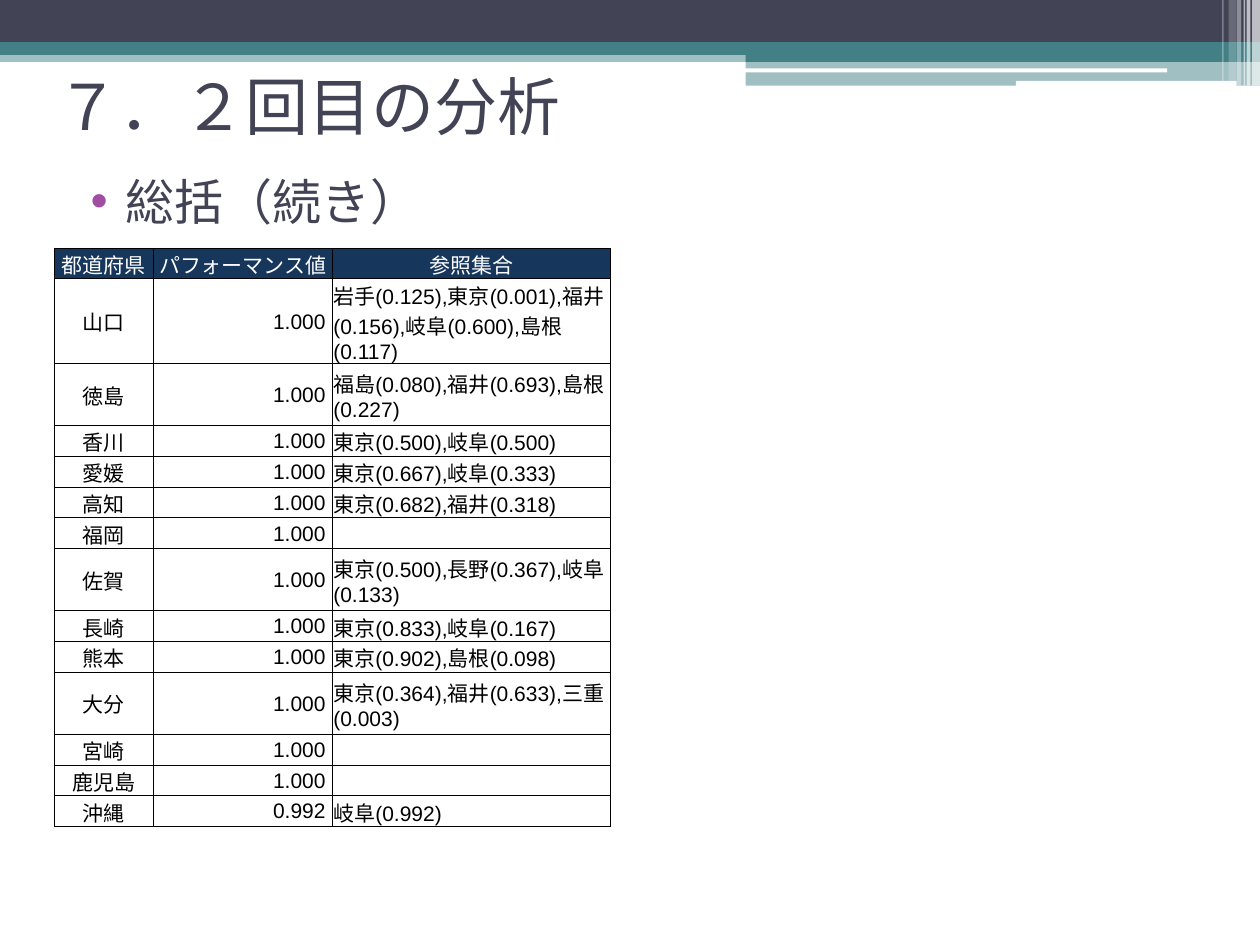
from lxml import etree
from pptx import Presentation
from pptx.dml.color import RGBColor
from pptx.enum.shapes import MSO_SHAPE as Shape
from pptx.enum.text import MSO_ANCHOR as Anchor, MSO_AUTO_SIZE as AutoSize, PP_ALIGN as Align
from pptx.oxml.ns import qn
from pptx.util import Cm, Pt

SLATE = RGBColor(0x42, 0x44, 0x56)
TEAL = RGBColor(0x43, 0x80, 0x86)
NAVY = RGBColor(0x16, 0x36, 0x5C)
WHITE = RGBColor(0xFF, 0xFF, 0xFF)
BLACK = RGBColor(0, 0, 0)
PURPLE = RGBColor(0xA0, 0x4D, 0xA3)

# kind, left, top, width, height (cm), colour, opacity (%)
BANDS = [
    (Shape.RECTANGLE, 0, 1.02, 25.4, 0.23, TEAL, 50),
    (Shape.RECTANGLE, 0, 0, 25.4, 0.86, SLATE, 100),
    (Shape.RECTANGLE, 0, 0.85, 25.4, 0.26, TEAL, 100),
    (Shape.RECTANGLE, 15.03, 1, 10.37, 0.25, TEAL, 100),
    (Shape.RECTANGLE, 15.03, 1.23, 10.37, 0.5, TEAL, 50),
    (Shape.ROUNDED_RECTANGLE, 15.02, 1.38, 8.51, 0.08, WHITE, 100),
    (Shape.ROUNDED_RECTANGLE, 20.48, 1.63, 4.45, 0.1, WHITE, 100),
]
# left, width, height (cm), opacity (%)
STRIPES = [
    (25.24, 0.16, 1.73, 65), (25.13, 0.08, 1.73, 65), (25.07, 0.03, 1.73, 60),
    (24.94, 0.08, 1.73, 40), (24.77, 0.16, 1.63, 20), (24.64, 0.03, 1.63, 30),
]
BANDS += [(Shape.RECTANGLE, left, 0, width, height, WHITE, opacity)
          for left, width, height, opacity in STRIPES]

ROWS = [
    ("都道府県", "パフォーマンス値", "参照集合"),
    ("山口", "1.000 ", "岩手(0.125),東京(0.001),福井(0.156),岐阜(0.600),島根(0.117)"),
    ("徳島", "1.000 ", "福島(0.080),福井(0.693),島根(0.227)"),
    ("香川", "1.000 ", "東京(0.500),岐阜(0.500)"),
    ("愛媛", "1.000 ", "東京(0.667),岐阜(0.333)"),
    ("高知", "1.000 ", "東京(0.682),福井(0.318)"),
    ("福岡", "1.000 ", ""),
    ("佐賀", "1.000 ", "東京(0.500),長野(0.367),岐阜(0.133)"),
    ("長崎", "1.000 ", "東京(0.833),岐阜(0.167)"),
    ("熊本", "1.000 ", "東京(0.902),島根(0.098)"),
    ("大分", "1.000 ", "東京(0.364),福井(0.633),三重(0.003)"),
    ("宮崎", "1.000 ", ""),
    ("鹿児島", "1.000 ", ""),
    ("沖縄", "0.992 ", "岐阜(0.992)"),
]
COLUMN_WIDTHS = [2, 3.61, 5.6]
COLUMN_ALIGNS = [Align.CENTER, Align.RIGHT, Align.LEFT]
ROW_HEIGHT = 0.62
# Row height by number of commas in the reference set: two wrap once, four twice
WRAPPED_HEIGHTS = {2: 1.25, 4: 1.71}


def add_run(paragraph, text, size, font_name, color):
    run = paragraph.add_run()
    run.text = text
    run.font.size = Pt(size)
    run.font.name = font_name
    run.font.bold = False
    run.font.color.rgb = color


def add_borders(cell):
    properties = cell._tc.get_or_add_tcPr()
    for side in ("a:lnL", "a:lnR", "a:lnT", "a:lnB"):
        line = etree.SubElement(properties, qn(side), w=str(Pt(0.5)))
        fill = etree.SubElement(line, qn("a:solidFill"))
        etree.SubElement(fill, qn("a:srgbClr"), val=str(BLACK))


presentation = Presentation()
presentation.slide_width = Cm(25.4)
presentation.slide_height = Cm(19.05)
slide = presentation.slides.add_slide(presentation.slide_layouts[5])

# Header decoration
for kind, left, top, width, height, color, opacity in BANDS:
    band = slide.shapes.add_shape(kind, Cm(left), Cm(top), Cm(width), Cm(height))
    band.shadow.inherit = False
    band.line.fill.background()
    band.fill.solid()
    band.fill.fore_color.rgb = color
    if opacity < 100:
        color_element = band.fill._xPr.find(".//" + qn("a:srgbClr"))
        etree.SubElement(color_element, qn("a:alpha"), val=str(opacity * 1000))

# Title
title = slide.shapes.title
title.left, title.top, title.width, title.height = Cm(0.89), Cm(1.32), Cm(22.86), Cm(1.6)
title.text_frame.auto_size = AutoSize.NONE
title.text_frame.vertical_anchor = Anchor.MIDDLE
paragraph = title.text_frame.paragraphs[0]
paragraph.alignment = Align.LEFT
add_run(paragraph, "７．２回目の分析", 36, "Karla", SLATE)

# Bulleted heading
body = slide.shapes.add_textbox(Cm(1.27), Cm(3.33), Cm(22.86), Cm(14.94))
body.text_frame.word_wrap = True
paragraph = body.text_frame.paragraphs[0]
add_run(paragraph, "総括（続き）", 28, "Karla", SLATE)
properties = paragraph._p.get_or_add_pPr()
properties.set("marL", str(Cm(1.02)))
properties.set("indent", str(-Cm(0.71)))
bullet_color = etree.SubElement(properties, qn("a:buClr"))
etree.SubElement(bullet_color, qn("a:srgbClr"), val=str(PURPLE))
etree.SubElement(properties, qn("a:buFont"), typeface="Arial")
etree.SubElement(properties, qn("a:buChar"), char="•")

# Table of prefectures
row_heights = [WRAPPED_HEIGHTS.get(texts[2].count(","), ROW_HEIGHT) for texts in ROWS]
table = slide.shapes.add_table(len(ROWS), len(COLUMN_WIDTHS), Cm(1.09), Cm(5),
                               Cm(sum(COLUMN_WIDTHS)), Cm(sum(row_heights))).table
table.horz_banding = False
for column, width in zip(table.columns, COLUMN_WIDTHS):
    column.width = Cm(width)
for row_index, texts in enumerate(ROWS):
    is_header = row_index == 0
    table.rows[row_index].height = Cm(row_heights[row_index])
    for column_index, text in enumerate(texts):
        cell = table.cell(row_index, column_index)
        cell.vertical_anchor = Anchor.MIDDLE
        cell.margin_left = cell.margin_right = cell.margin_top = Cm(0.02)
        cell.margin_bottom = Cm(0)
        add_borders(cell)
        if is_header:
            cell.fill.solid()
            cell.fill.fore_color.rgb = NAVY
        else:
            cell.fill.background()
        paragraph = cell.text_frame.paragraphs[0]
        paragraph.alignment = Align.CENTER if is_header else COLUMN_ALIGNS[column_index]
        if text:
            add_run(paragraph, text, 12, "Arial", WHITE if is_header else BLACK)
        else:
            etree.SubElement(paragraph._p, qn("a:endParaRPr"), sz="1200")

presentation.save("out.pptx")
